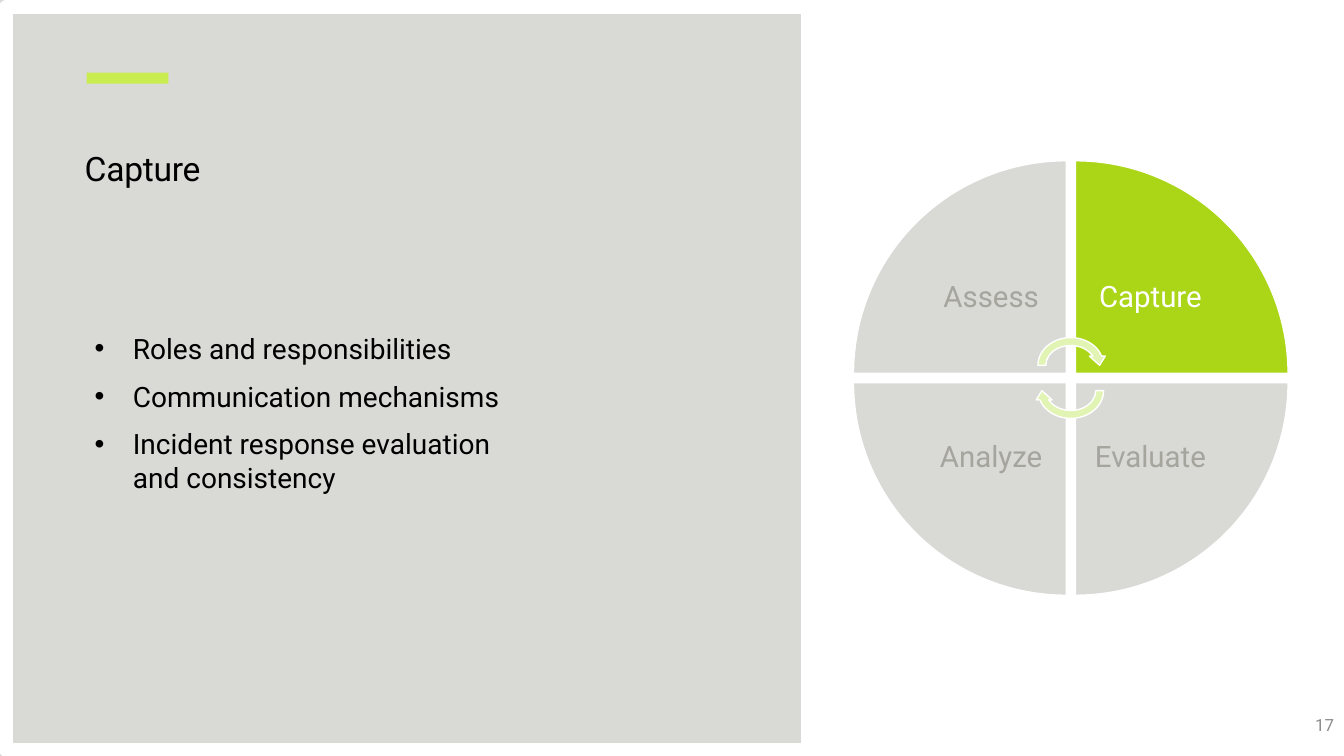
"""Build the Capture slide: a text panel beside a four-part cycle wheel."""
from lxml import etree
from pptx import Presentation, util as u
from pptx.dml.color import RGBColor
from pptx.enum import shapes, text
from pptx.oxml.ns import qn

WIDE, HIGH = 13.33, 7.5
TITLE = "Capture"
POINTS = [
    "Roles and responsibilities",
    "Communication mechanisms",
    "Incident response evaluation and consistency",
]
PAGE = "17"
WHEEL = [
    ("Assess", 0, 0, 0),
    ("Capture", 1, 0, 90),
    ("Evaluate", 1, 1, 180),
    ("Analyze", 0, 1, 270),
]
ACTIVE = "Capture"
THEME = {
    "font": "Roboto", "panel": "D9D9D6", "accent": "C9EC51", "white": "FFFFFF",
    "ink": "000000", "mute": "A5A59E", "page": "8C8C8C", "live": "ABD617",
    "arrow": "E1F4B3", "title": 24, "label": 21, "body": 20, "note": 12,
    "frame": 9.5, "edge": 1,
}
EDGE = 8.01
HUB = (10.62, 3.75)
GAP, SIDE, BOX = 0.09, 2.11, 1.49
ARROW = (0.73, 0.63)
RISE = 0.125
KIND = shapes.MSO_SHAPE

deck = Presentation()
deck.slide_width, deck.slide_height = u.Inches(WIDE), u.Inches(HIGH)
slide = deck.slides.add_slide(deck.slide_layouts[6])


def paint(name):
    return RGBColor.from_string(THEME[name])


def apply(item, vals):
    for key, val in vals.items():
        setattr(item, key, val)


def stroke(line, name, size):
    line.color.rgb = paint(name)
    line.width = u.Pt(THEME[size])


def shape(kind, area, fill=None, size=None, turn=0):
    item = slide.shapes.add_shape(kind, *map(u.Inches, area))
    item.shadow.inherit = False
    item.rotation = turn
    if fill:
        item.fill.solid()
        item.fill.fore_color.rgb = paint(fill)
    else:
        item.fill.background()
    if size:
        stroke(item.line, "white", size)
    else:
        item.line.fill.background()


def write(area, lines, size, color, inset=None, anchor="TOP", align="LEFT",
          lead=None, gap=0, bullet=0, track=0):
    frame = slide.shapes.add_textbox(*map(u.Inches, area)).text_frame
    apply(frame, {"word_wrap": True, "vertical_anchor": text.MSO_ANCHOR[anchor]})
    if inset is not None:
        sides = ("left", "top", "right", "bottom")
        apply(frame, {f"margin_{side}": u.Inches(inset) for side in sides})
    for num, line in enumerate(lines):
        para = frame.add_paragraph() if num else frame.paragraphs[0]
        apply(para, {"alignment": text.PP_ALIGN[align], "line_spacing": lead,
                     "space_before": u.Pt(gap if num else 0)})
        if bullet:
            props = para._p.get_or_add_pPr()
            props.set("marL", str(u.Inches(bullet)))
            props.set("indent", str(-u.Inches(bullet)))
            etree.SubElement(props, qn("a:buFont")).set("typeface", "Arial")
            etree.SubElement(props, qn("a:buChar")).set("char", "•")
        run = para.add_run()
        run.text = line
        apply(run.font, {"name": THEME["font"], "size": u.Pt(THEME[size])})
        run.font.color.rgb = paint(color)
        if track:
            run._r.get_or_add_rPr().set("spc", str(track))


def panel():
    shape(KIND.RECTANGLE, (0, 0, EDGE, HIGH), "panel")
    shape(KIND.RECTANGLE, (0.86, 0.72, 0.81, 0.11), "accent")
    ends = map(u.Inches, (EDGE, 0.09, EDGE, 7.44))
    rule = slide.shapes.add_connector(shapes.MSO_CONNECTOR.STRAIGHT, *ends)
    stroke(rule.line, "white", "frame")
    etree.SubElement(rule._element.spPr, qn("a:effectLst"))
    shape(KIND.RECTANGLE, (0.06, 0.07, 13.18, 7.37), size="frame")
    write((0.84, 3.24, 4.53, 3.6), POINTS, "body", "ink", gap=10, bullet=0.38)
    write((0.84, 1.47, 6.12, 1.64), [TITLE], "title", "ink", inset=0, track=-20)
    write((WIDE - 3, 6.99, 3, 0.4), [PAGE], "note", "page",
          anchor="MIDDLE", align="RIGHT")


def place(col, row, side):
    left, top = (mid + (GAP / 2 if far else -GAP / 2 - side)
                 for mid, far in zip(HUB, (col, row)))
    return left, top, side, side


def wheel():
    for name, col, row, turn in WHEEL:
        live = name == ACTIVE
        shape(KIND.PIE_WEDGE, place(col, row, SIDE),
              "live" if live else "panel", "edge", turn)
        write(place(col, row, BOX), [name], "label", "white" if live else "mute",
              inset=0.16, anchor="MIDDLE", align="CENTER", lead=0.9)
    wide, high = ARROW
    for turn, shift in ((0, -RISE), (180, RISE)):
        area = (HUB[0] - wide / 2, HUB[1] + shift - high / 2, wide, high)
        shape(KIND.CIRCULAR_ARROW, area, "arrow", "edge", turn)


panel()
wheel()
deck.save("out.pptx")
